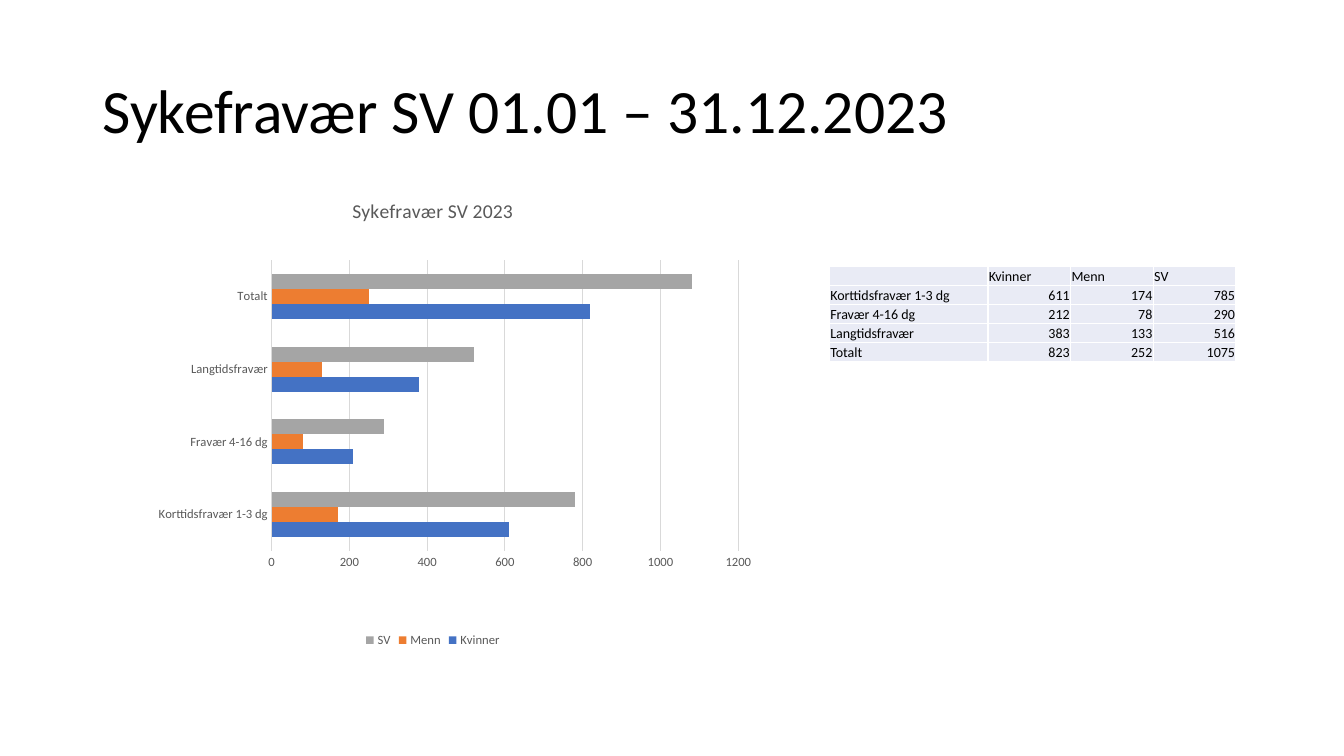
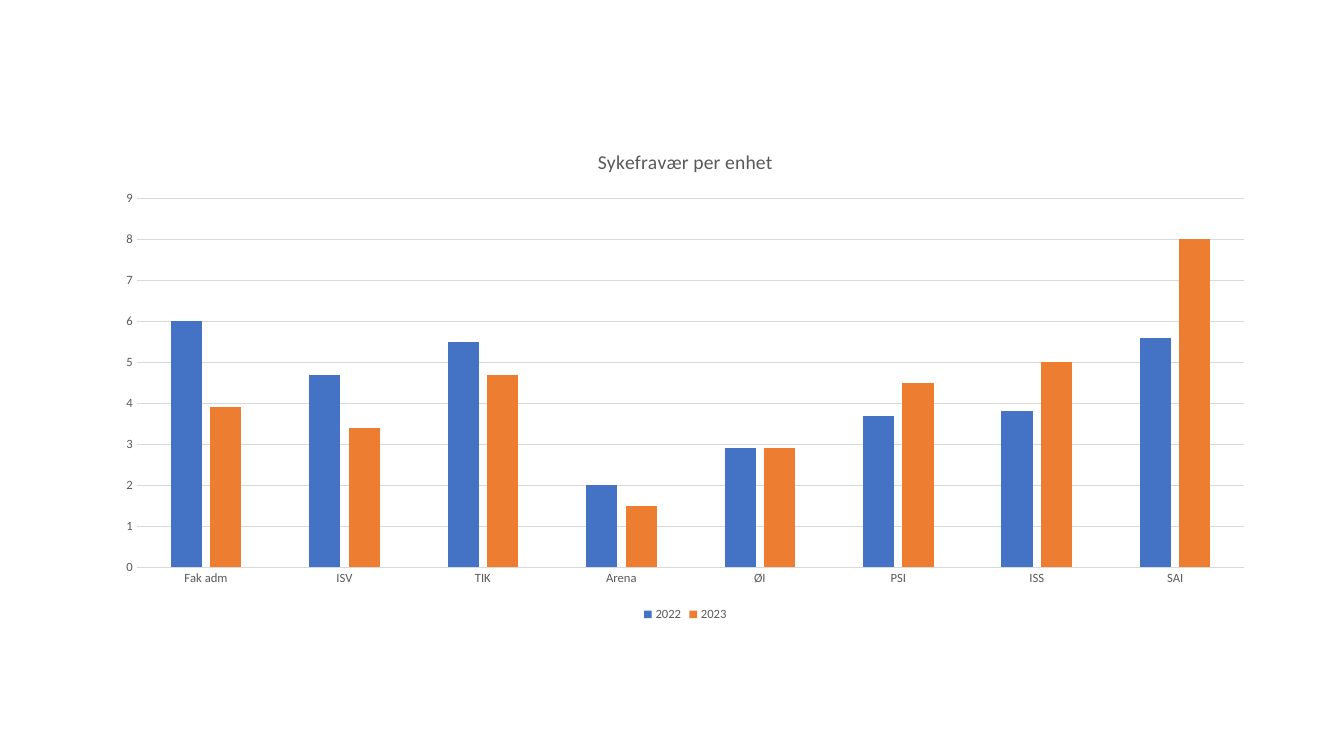
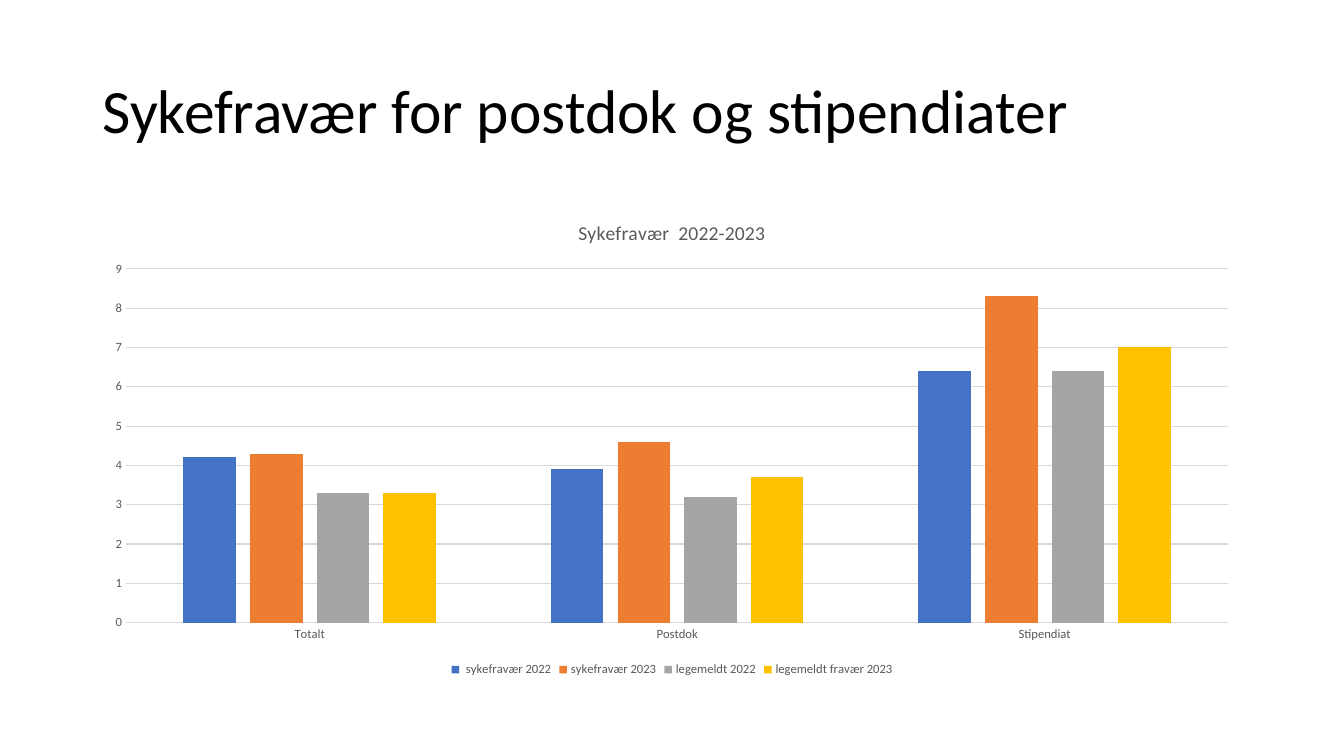
from dataclasses import dataclass

import pptx
import pptx.chart.data
import pptx.dml.color
import pptx.enum.chart
import pptx.enum.text
import pptx.oxml
import pptx.oxml.ns
import pptx.util
from lxml import etree

Pt = pptx.util.Pt
qn = pptx.oxml.ns.qn
ChartType = pptx.enum.chart.XL_CHART_TYPE


@dataclass(frozen=True)
class Theme:
    font: str = "Calibri"
    ink: str = "000000"
    muted: str = "595959"
    rule: str = "D9D9D9"
    cell: str = "E9EBF5"
    border: str = "FFFFFF"
    accents: tuple = ("4472C4", "ED7D31", "A5A5A5", "FFC000")
    title_size: float = 44
    chart_title_size: float = 14
    table_size: float = 10
    label_size: float = 9
    rule_width: float = 0.75
    border_width: float = 1


@dataclass(frozen=True)
class Box:
    left: float
    top: float
    width: float
    height: float

    def lengths(self):
        return Pt(self.left), Pt(self.top), Pt(self.width), Pt(self.height)


THEME = Theme()
SLIDE_WIDTH, SLIDE_HEIGHT = 960, 540
TITLE_BOX = Box(66.2, 28.8, 828, 104.4)

ABSENCE_GROUPS = ("Kvinner", "Menn", "SV")
ABSENCE = {
    "Korttidsfravær 1-3 dg": (611, 174, 785),
    "Fravær 4-16 dg": (212, 78, 290),
    "Langtidsfravær": (383, 133, 516),
    "Totalt": (823, 252, 1075),
}
UNITS = ("Fak adm", "ISV", "TIK", "Arena", "ØI", "PSI", "ISS", "SAI")
UNIT_ABSENCE = {
    "2022": (6, 4.7, 5.5, 2, 2.9, 3.7, 3.8, 5.6),
    "2023": (3.9, 3.4, 4.7, 1.5, 2.9, 4.5, 5, 8),
}
POSITIONS = ("Totalt", "Postdok", "Stipendiat")
POSITION_ABSENCE = {
    " sykefravær 2022": (4.2, 3.9, 6.4),
    "sykefravær 2023": (4.3, 4.6, 8.3),
    "legemeldt 2022": (3.3, 3.2, 6.4),
    "legemeldt fravær 2023": (3.3, 3.7, 7),
}


def rgb(value):
    return pptx.dml.color.RGBColor.from_string(value)


def style_font(font, size, colour):
    font.name = THEME.font
    font.size = Pt(size)
    font.bold = False
    font.color.rgb = rgb(colour)


def style_rule(line):
    line.color.rgb = rgb(THEME.rule)
    line.width = Pt(THEME.rule_width)


def add_title(slide, box, wording):
    frame = slide.shapes.add_textbox(*box.lengths()).text_frame
    frame.word_wrap = True
    frame.vertical_anchor = pptx.enum.text.MSO_ANCHOR.MIDDLE
    frame.text = wording
    heading = frame.paragraphs[0]
    heading.line_spacing = 0.9
    style_font(heading.runs[0].font, THEME.title_size, THEME.ink)


def style_axes(chart):
    for axis in (chart.category_axis, chart.value_axis):
        axis.major_tick_mark = pptx.enum.chart.XL_TICK_MARK.NONE
        axis.minor_tick_mark = pptx.enum.chart.XL_TICK_MARK.NONE
        style_font(axis.tick_labels.font, THEME.label_size, THEME.muted)
    style_rule(chart.category_axis.format.line)
    chart.value_axis.format.line.fill.background()
    chart.value_axis.has_major_gridlines = True
    style_rule(chart.value_axis.major_gridlines.format.line)


def place_plot(chart, x, y, w, h):
    """Fix the inner plot area, in fractions of the chart."""
    plot_area = chart._chartSpace.chart.plotArea
    for old in plot_area.findall(qn("c:layout")):
        plot_area.remove(old)
    layout = etree.Element(qn("c:layout"))
    manual = etree.SubElement(layout, qn("c:manualLayout"))
    settings = (("layoutTarget", "inner"), ("xMode", "edge"), ("yMode", "edge"),
                ("x", x), ("y", y), ("w", w), ("h", h))
    for tag, value in settings:
        etree.SubElement(manual, qn(f"c:{tag}")).set("val", str(value))
    plot_area.insert(0, layout)


def add_bar_chart(slide, box, kind, title, categories, series, gap, overlap):
    data = pptx.chart.data.CategoryChartData()
    data.categories = categories
    for name, values in series.items():
        data.add_series(name, values)
    chart = slide.shapes.add_chart(kind, *box.lengths(), data).chart
    style_font(chart.font, THEME.table_size, THEME.ink)

    chart.has_title = True
    heading = chart.chart_title.text_frame
    heading.text = title
    style_font(heading.paragraphs[0].runs[0].font,
               THEME.chart_title_size, THEME.muted)

    chart.has_legend = True
    chart.legend.position = pptx.enum.chart.XL_LEGEND_POSITION.BOTTOM
    chart.legend.include_in_layout = False
    style_font(chart.legend.font, THEME.label_size, THEME.muted)

    style_axes(chart)
    plot = chart.plots[0]
    plot.vary_by_categories = False
    plot.gap_width = gap
    plot.overlap = overlap
    for bars, colour in zip(plot.series, THEME.accents):
        bars.format.fill.solid()
        bars.format.fill.fore_color.rgb = rgb(colour)
    return chart


def add_column_chart(slide, box, title, categories, series):
    return add_bar_chart(slide, box, ChartType.COLUMN_CLUSTERED, title,
                         categories, series, gap=219, overlap=-27)


def border_cell(cell):
    properties = cell._tc.get_or_add_tcPr()
    for place, side in enumerate(("lnL", "lnR", "lnT", "lnB")):
        line = etree.Element(qn(f"a:{side}"), w=str(Pt(THEME.border_width)))
        fill = etree.SubElement(line, qn("a:solidFill"))
        etree.SubElement(fill, qn("a:srgbClr"), val=THEME.border)
        properties.insert(place, line)


def fill_cell(cell, wording, align):
    cell.fill.solid()
    cell.fill.fore_color.rgb = rgb(THEME.cell)
    border_cell(cell)
    cell.margin_left = cell.margin_right = cell.margin_top = Pt(0.7)
    cell.margin_bottom = 0
    cell.vertical_anchor = pptx.enum.text.MSO_ANCHOR.BOTTOM
    cell.text = wording
    paragraph = cell.text_frame.paragraphs[0]
    paragraph.alignment = align
    for run in paragraph.runs:
        style_font(run.font, THEME.table_size, THEME.ink)
    if not wording:
        etree.SubElement(paragraph._p, qn("a:endParaRPr"),
                         sz=str(int(THEME.table_size * 100)))


def add_absence_table(slide, box):
    rows = [("", *ABSENCE_GROUPS)]
    rows += [(label, *map(str, counts)) for label, counts in ABSENCE.items()]
    table = slide.shapes.add_table(len(rows), len(rows[0]), *box.lengths()).table
    table.first_row = table.horz_banding = False
    label_width = box.width * 0.39
    count_width = (box.width - label_width) / len(ABSENCE_GROUPS)
    for index, column in enumerate(table.columns):
        column.width = Pt(count_width if index else label_width)
    for row in table.rows:
        row.height = Pt(box.height / len(rows))
    for r, row in enumerate(rows):
        for c, wording in enumerate(row):
            is_count = r > 0 and c > 0
            align = pptx.enum.text.PP_ALIGN
            fill_cell(table.cell(r, c), wording,
                      align.RIGHT if is_count else align.LEFT)


def rounded_absence():
    """Absence per group, to the nearest ten days."""
    columns = zip(*ABSENCE.values())
    return {group: [round(count, -1) for count in counts]
            for group, counts in zip(ABSENCE_GROUPS, columns)}


def build_faculty_slide(slide):
    add_title(slide, TITLE_BOX, "Sykefravær SV 01.01 – 31.12.2023")
    add_absence_table(slide, Box(592.4, 190, 290.4, 68.4))
    chart = add_bar_chart(slide, Box(66.2, 127.8, 486, 337.6),
                          ChartType.BAR_CLUSTERED, "Sykefravær SV 2023",
                          list(ABSENCE), rounded_absence(), gap=182, overlap=0)
    place_plot(chart, 0.263, 0.172, 0.686, 0.615)


def build_units_slide(slide):
    add_column_chart(slide, Box(73.6, 92.8, 832, 354.2),
                     "Sykefravær per enhet", UNITS, UNIT_ABSENCE)


def build_positions_slide(slide):
    add_title(slide, TITLE_BOX, "Sykefravær for postdok og stipendiater")
    add_column_chart(slide, Box(66, 143.6, 828, 342.8),
                     "Sykefravær  2022-2023", POSITIONS, POSITION_ABSENCE)


def main():
    deck = pptx.Presentation()
    deck.slide_width, deck.slide_height = Pt(SLIDE_WIDTH), Pt(SLIDE_HEIGHT)
    blank = deck.slide_layouts[6]
    for build in (build_faculty_slide, build_units_slide, build_positions_slide):
        build(deck.slides.add_slide(blank))
    deck.save("out.pptx")


if __name__ == "__main__":
    main()
